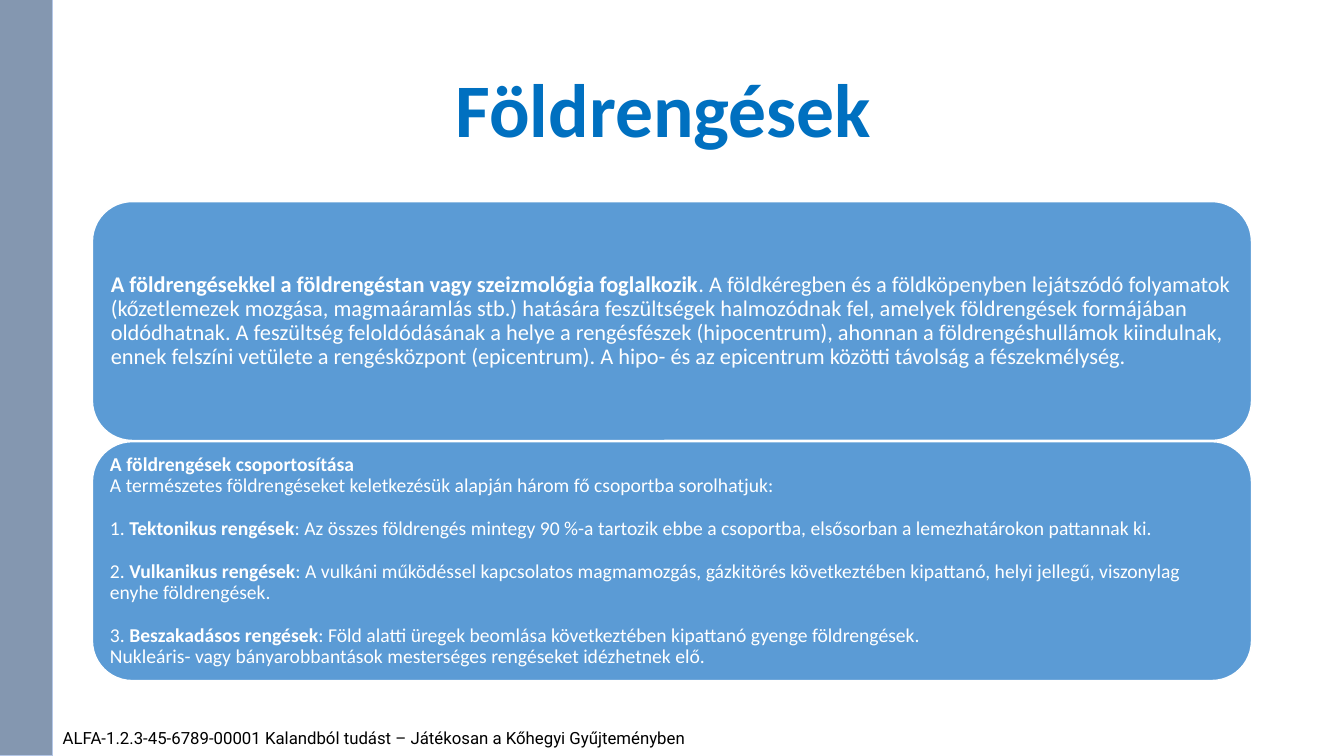
from pptx import Presentation
from pptx.dml.color import RGBColor
from pptx.enum.shapes import MSO_SHAPE
from pptx.enum.text import MSO_ANCHOR, PP_ALIGN
from pptx.util import Cm, Pt

WHITE = RGBColor(0xFF, 0xFF, 0xFF)
BLACK = RGBColor(0x00, 0x00, 0x00)
TITLE_BLUE = RGBColor(0x00, 0x70, 0xC0)
CARD_BLUE = RGBColor(0x5B, 0x9B, 0xD5)
BAR_GREY = RGBColor(0x84, 0x97, 0xB0)
BAR_EDGE = RGBColor(0xB4, 0xC7, 0xE7)

SLIDE_WIDTH, SLIDE_HEIGHT = Cm(33.87), Cm(19.05)
BAR_WIDTH = Cm(1.33)
CONTENT_LEFT, CONTENT_WIDTH = Cm(2.33), Cm(29.21)
CARD_TOP, CARD_HEIGHT, CARD_STEP = Cm(5.08), Cm(6.02), Cm(6.05)
GROUP_GAP = Pt(15.4)

# A card is a list of paragraphs: (space before, [(text, bold), ...])
SEISMOLOGY = [
    (0, [
        ("A földrengésekkel a földrengéstan vagy szeizmológia foglalkozik", True),
        (". A földkéregben és a földköpenyben lejátszódó folyamatok "
         "(kőzetlemezek mozgása, magmaáramlás stb.) hatására feszültségek "
         "halmozódnak fel, amelyek földrengések formájában oldódhatnak. "
         "A feszültség feloldódásának a helye a rengésfészek (hipocentrum), "
         "ahonnan a földrengéshullámok kiindulnak, ennek felszíni vetülete "
         "a rengésközpont (epicentrum). A hipo- és az epicentrum közötti "
         "távolság a fészekmélység.", False),
    ]),
]
EARTHQUAKE_GROUPS = [
    (0, [("A földrengések csoportosítása", True)]),
    (0, [("A természetes földrengéseket keletkezésük alapján három fő "
          "csoportba sorolhatjuk:", False)]),
    (GROUP_GAP, [
        ("1. ", False), ("Tektonikus rengések", True),
        (": Az összes földrengés mintegy 90 %-a tartozik ebbe a csoportba, "
         "elsősorban a lemezhatárokon pattannak ki.", False),
    ]),
    (GROUP_GAP, [
        ("2. ", False), ("Vulkanikus rengések", True),
        (": A vulkáni működéssel kapcsolatos magmamozgás, gázkitörés "
         "következtében kipattanó, helyi jellegű, viszonylag enyhe "
         "földrengések.", False),
    ]),
    (GROUP_GAP, [
        ("3. ", False), ("Beszakadásos rengések", True),
        (": Föld alatti üregek beomlása következtében kipattanó gyenge "
         "földrengések.", False),
    ]),
    (0, [("Nukleáris- vagy bányarobbantások mesterséges rengéseket "
          "idézhetnek elő.", False)]),
]


def format_span(span, size, color, bold=False, font="Calibri"):
    span.font.name = font
    span.font.size = Pt(size)
    span.font.bold = bold
    span.font.color.rgb = color


def place(box, left, top, width, height):
    box.left, box.top, box.width, box.height = left, top, width, height


def add_filled_shape(page, kind, bounds, fill, edge, edge_width):
    shape = page.shapes.add_shape(kind, *bounds)
    shape.shadow.inherit = False
    shape.fill.solid()
    shape.fill.fore_color.rgb = fill
    shape.line.color.rgb = edge
    shape.line.width = Pt(edge_width)
    return shape


def add_title(page, text):
    title = page.shapes.title
    place(title, CONTENT_LEFT, Cm(1.01), CONTENT_WIDTH, Cm(3.68))
    frame = title.text_frame
    frame.text = text
    frame.vertical_anchor = MSO_ANCHOR.MIDDLE
    para = frame.paragraphs[0]
    para.alignment = PP_ALIGN.CENTER
    para.line_spacing = 0.9
    format_span(para.runs[0], 54, TITLE_BLUE, bold=True)


def add_card(page, top, paragraphs, size, inset):
    bounds = (CONTENT_LEFT, top, CONTENT_WIDTH, CARD_HEIGHT)
    card = add_filled_shape(page, MSO_SHAPE.ROUNDED_RECTANGLE, bounds,
                            CARD_BLUE, WHITE, 1)
    frame = card.text_frame
    frame.word_wrap = True
    frame.vertical_anchor = MSO_ANCHOR.MIDDLE
    frame.margin_left = frame.margin_right = inset
    frame.margin_top = frame.margin_bottom = inset
    for index, (space_before, spans) in enumerate(paragraphs):
        para = frame.add_paragraph() if index else frame.paragraphs[0]
        para.alignment = PP_ALIGN.LEFT
        para.line_spacing = 0.9
        para.space_before = space_before
        for text, bold in spans:
            span = para.add_run()
            span.text = text
            format_span(span, size, WHITE, bold)


def add_footer(page, text):
    box = page.shapes.add_textbox(BAR_WIDTH, Cm(18.22), Cm(21.08), Cm(0.8))
    frame = box.text_frame
    frame.word_wrap = True
    frame.text = text
    format_span(frame.paragraphs[0].runs[0], 12, BLACK, font="Roboto")


def main():
    deck = Presentation()
    deck.slide_width, deck.slide_height = SLIDE_WIDTH, SLIDE_HEIGHT
    page = deck.slides.add_slide(deck.slide_layouts.get_by_name("Title Only"))

    add_title(page, "Földrengések ")
    cards = [(SEISMOLOGY, 16, Cm(0.17)), (EARTHQUAKE_GROUPS, 14, Cm(0.15))]
    for row, (paragraphs, size, inset) in enumerate(cards):
        add_card(page, CARD_TOP + row * CARD_STEP, paragraphs, size, inset)
    add_filled_shape(page, MSO_SHAPE.RECTANGLE, (0, 0, BAR_WIDTH, SLIDE_HEIGHT),
                     BAR_GREY, BAR_EDGE, 0.75)
    add_footer(page, "ALFA-1.2.3-45-6789-00001 Kalandból tudást – "
                     "Játékosan a Kőhegyi Gyűjteményben")
    deck.save("out.pptx")


if __name__ == "__main__":
    main()
